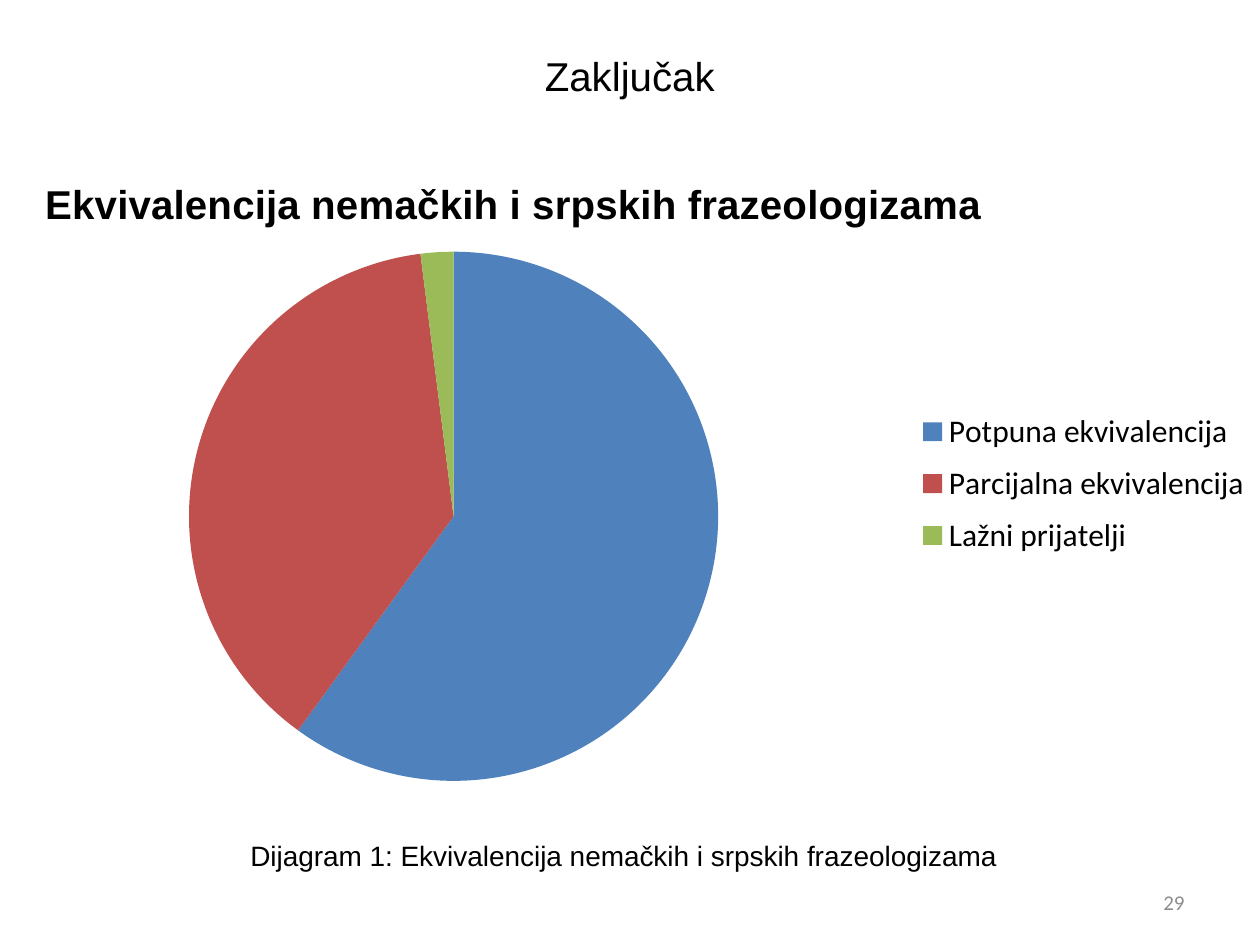
from dataclasses import dataclass

from lxml.etree import SubElement
from pptx import Presentation
from pptx.chart.data import CategoryChartData
from pptx.dml.color import RGBColor
from pptx.enum.chart import XL_CHART_TYPE as ChartType, XL_LEGEND_POSITION as LegendPosition
from pptx.enum.text import MSO_ANCHOR as Anchor, PP_ALIGN as Align
from pptx.oxml.ns import qn
from pptx.util import Inches, Pt

BLACK = RGBColor(0x00, 0x00, 0x00)
GRAY = RGBColor(0x8C, 0x8C, 0x8C)
BLUE = RGBColor(0x4F, 0x81, 0xBD)
RED = RGBColor(0xC0, 0x50, 0x4D)
GREEN = RGBColor(0x9B, 0xBB, 0x59)

WIDTH, HEIGHT = Inches(10), Inches(7.5)


@dataclass(frozen=True)
class Area:
    """Place and size as shares of the surrounding slide or chart."""
    x: float
    y: float
    w: float
    h: float

    def on_slide(self) -> tuple[int, int, int, int]:
        return (int(self.x * WIDTH), int(self.y * HEIGHT),
                int(self.w * WIDTH), int(self.h * HEIGHT))


@dataclass(frozen=True)
class Label:
    text: str
    area: Area
    size: float
    font: str = "Arial"
    color: RGBColor = BLACK
    align: Align = Align.CENTER


@dataclass(frozen=True)
class Slice:
    name: str
    percent: int
    color: RGBColor


LABELS = [
    Label("Zaključak", Area(0, 0.05, 1, 0.06), 23),
    Label("Dijagram 1: Ekvivalencija nemačkih i srpskih frazeologizama",
          Area(0, 0.88, 0.99, 0.05), 16),
    Label("29", Area(0.72, 0.93, 0.23, 0.05), 12, "Calibri", GRAY, Align.RIGHT),
]
SLICES = [
    Slice("Potpuna ekvivalencija", 60, BLUE),
    Slice("Parcijalna ekvivalencija", 38, RED),
    Slice("Lažni prijatelji", 2, GREEN),
]
CHART_TITLE = "Ekvivalencija nemačkih i srpskih frazeologizama"
CHART_AREA = Area(0, 0.16, 1, 0.69)
PIE_AREA = Area(0.15, 0.15, 0.42, 0.82)
LEGEND_AREA = Area(0.72, 0.38, 0.28, 0.26)


def style(font, size: float, name: str, color: RGBColor, bold: bool = False) -> None:
    font.size, font.name, font.bold = Pt(size), name, bold
    font.color.rgb = color


def add_label(slide, label: Label) -> None:
    frame = slide.shapes.add_textbox(*label.area.on_slide()).text_frame
    frame.word_wrap = True
    frame.vertical_anchor = Anchor.MIDDLE
    paragraph = frame.paragraphs[0]
    paragraph.alignment = label.align
    run = paragraph.add_run()
    run.text = label.text
    style(run.font, label.size, label.font, label.color)


def place(part, area: Area, with_size: bool = True) -> None:
    """Give a chart part a fixed place within the chart."""
    layout = part.find(qn("c:layout"))
    if layout is None:
        layout = part.makeelement(qn("c:layout"))
        before = [child for child in part
                  if child.tag in (qn("c:tx"), qn("c:legendPos"), qn("c:legendEntry"))]
        part.insert(len(before), layout)
    manual = SubElement(layout, qn("c:manualLayout"))
    settings = {"xMode": "edge", "yMode": "edge", "x": area.x, "y": area.y}
    if part.tag == qn("c:plotArea"):
        settings = {"layoutTarget": "inner", **settings}
    if with_size:
        settings |= {"w": area.w, "h": area.h}
    for tag, value in settings.items():
        SubElement(manual, qn(f"c:{tag}")).set("val", str(value))


def add_pie(slide, slices: list[Slice]) -> None:
    data = CategoryChartData()
    data.categories = [part.name for part in slices]
    data.add_series("Series 1", [part.percent for part in slices])
    chart = slide.shapes.add_chart(ChartType.PIE, *CHART_AREA.on_slide(), data).chart
    style(chart.font, 18, "Calibri", BLACK)

    # Slices
    pie = chart.plots[0]
    pie.vary_by_categories = True
    for index, part in enumerate(slices):
        fill = pie.series[0].points[index].format.fill
        fill.solid()
        fill.fore_color.rgb = part.color
    place(chart.element.chart.plotArea, PIE_AREA)

    # Title
    chart.has_title = True
    run = chart.chart_title.text_frame.paragraphs[0].add_run()
    run.text = CHART_TITLE
    style(run.font, 23, "Arial", BLACK, bold=True)
    chart.chart_title.include_in_layout = False
    place(chart.element.chart.find(qn("c:title")), Area(0.03, 0.03, 0, 0), with_size=False)

    # Legend
    chart.has_legend = True
    chart.legend.position = LegendPosition.RIGHT
    chart.legend.include_in_layout = False
    style(chart.legend.font, 18, "Calibri", BLACK)
    place(chart.element.chart.find(qn("c:legend")), LEGEND_AREA)


def main() -> None:
    deck = Presentation()
    deck.slide_width, deck.slide_height = WIDTH, HEIGHT
    slide = deck.slides.add_slide(deck.slide_layouts[6])
    for label in LABELS:
        add_label(slide, label)
    add_pie(slide, SLICES)
    deck.save("out.pptx")


if __name__ == "__main__":
    main()
